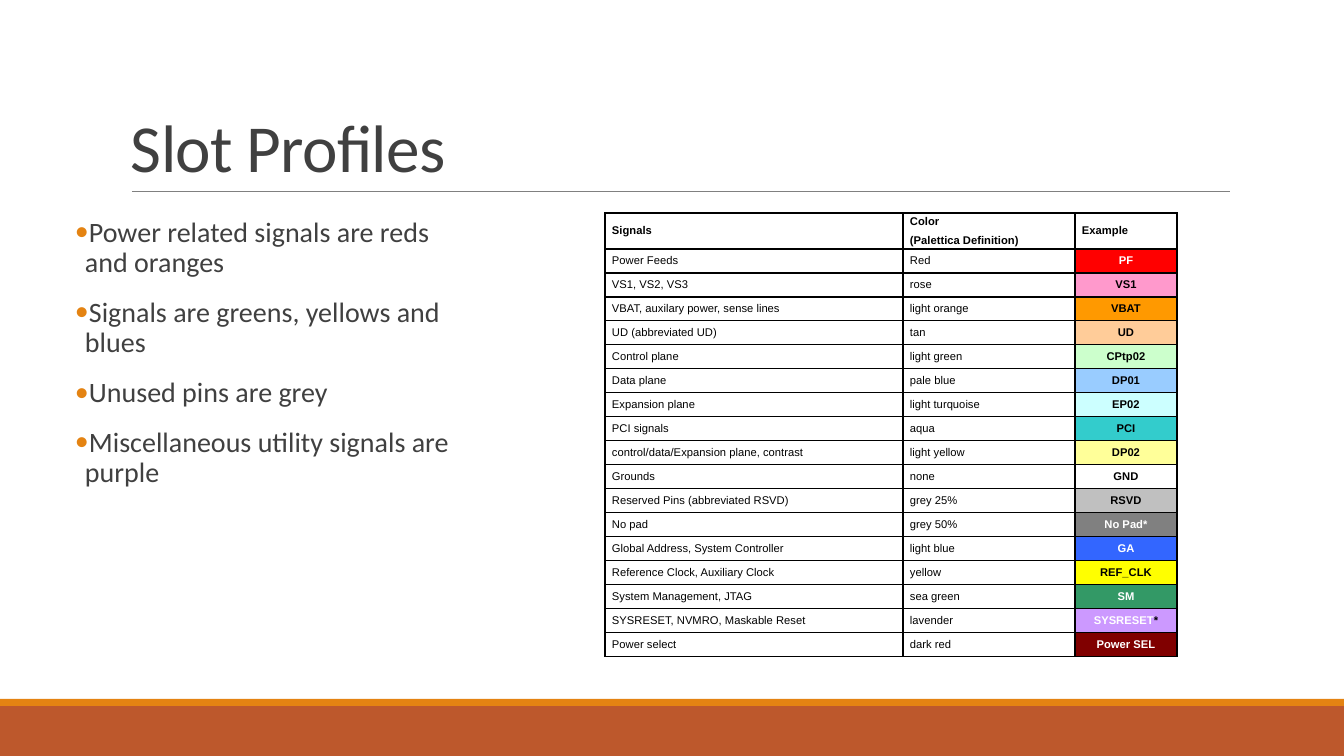
from dataclasses import dataclass
from typing import NamedTuple

from lxml import etree
from pptx import Presentation
from pptx.dml.color import RGBColor
from pptx.enum.shapes import MSO_CONNECTOR, MSO_SHAPE
from pptx.enum.text import MSO_ANCHOR, PP_ALIGN
from pptx.oxml.ns import qn
from pptx.util import Emu, Pt

STRAIGHT = MSO_CONNECTOR.STRAIGHT
RECTANGLE = MSO_SHAPE.RECTANGLE
BOTTOM, MIDDLE = MSO_ANCHOR.BOTTOM, MSO_ANCHOR.MIDDLE
CENTER, LEFT = PP_ALIGN.CENTER, PP_ALIGN.LEFT
EMU_PER_PX = 914400 / 100.8


@dataclass(frozen=True)
class Theme:
    """Colours, fonts and type sizes of the slide."""

    text: str = "404040"
    rule: str = "808080"
    accent: str = "E48312"
    footer: str = "BD582C"
    black: str = "000000"
    white: str = "FFFFFF"
    font: str = "Calibri"
    table_font: str = "Arial"
    title_size: int = 48
    body_size: int = 20
    table_size: int = 8
    inner_border: float = 1
    outer_border: float = 1.5


THEME = Theme()


class Signal(NamedTuple):
    """One row of the signal colour table."""

    name: str
    color: str
    example: str
    fill: str
    ink: str = THEME.black
    suffix: str = ""


class Box(NamedTuple):
    """A region in px."""

    left: int
    top: int
    width: int
    height: int


TITLE = "Slot Profiles"
BULLETS = [
    "Power related signals are reds and oranges",
    "Signals are greens, yellows and blues",
    "Unused pins are grey",
    "Miscellaneous utility signals are purple",
]
HEADINGS = ["Signals", "Color\n(Palettica Definition)", "Example"]
SIGNALS = [
    Signal("Power Feeds", "Red", "PF", "FF0000", THEME.white),
    Signal("VS1, VS2, VS3", "rose", "VS1", "FF99CC"),
    Signal("VBAT, auxilary power, sense lines", "light orange", "VBAT", "FF9900"),
    Signal("UD (abbreviated UD)", "tan", "UD", "FFCC99"),
    Signal("Control plane", "light green", "CPtp02", "CCFFCC"),
    Signal("Data plane", "pale blue", "DP01", "99CCFF"),
    Signal("Expansion plane", "light turquoise", "EP02", "CCFFFF"),
    Signal("PCI signals", "aqua", "PCI", "33CCCC"),
    Signal("control/data/Expansion plane, contrast", "light yellow", "DP02", "FFFF99"),
    Signal("Grounds", "none", "GND", "FFFFFF"),
    Signal("Reserved Pins (abbreviated RSVD)", "grey 25%", "RSVD", "C0C0C0"),
    Signal("No pad", "grey 50%", "No Pad*", "808080", THEME.white),
    Signal("Global Address, System Controller", "light blue", "GA", "3366FF", THEME.white),
    Signal("Reference Clock, Auxiliary Clock", "yellow", "REF_CLK", "FFFF00"),
    Signal("System Management, JTAG", "sea green", "SM", "339966", THEME.white),
    Signal("SYSRESET, NVMRO, Maskable Reset", "lavender", "SYSRESET", "CC99FF", THEME.white, "*"),
    Signal("Power select", "dark red", "Power SEL", "800000", THEME.white),
]
COLUMN_WIDTHS = [298, 172, 102]
HEADER_HEIGHT = 36


def px(length):
    """Turn px into EMU."""
    return Emu(round(length * EMU_PER_PX))


def place(box):
    """Turn a box in px into EMU lengths."""
    return [px(length) for length in box]


def style_run(run, size, color, font, bold=False):
    """Format one run."""
    run.font.size = Pt(size)
    run.font.name = font
    run.font.bold = bold
    run.font.color.rgb = RGBColor.from_string(color)


def add_band(slide, box, color):
    """Draw a plain filled band."""
    band = slide.shapes.add_shape(RECTANGLE, *place(box))
    band.shadow.inherit = False
    band.fill.solid()
    band.fill.fore_color.rgb = RGBColor.from_string(color)
    band.line.fill.background()


def add_footer(slide, box):
    """Draw the footer block with its accent strip on top."""
    strip = 7
    add_band(slide, box._replace(top=box.top + strip, height=box.height - strip), THEME.footer)
    add_band(slide, box._replace(height=strip), THEME.accent)


def add_title(slide, box):
    """Write the title and draw the rule below it."""
    bottom = box.top + box.height
    start, end = box.left + 11, box.left + box.width
    rule = slide.shapes.add_connector(STRAIGHT, px(start), px(bottom), px(end), px(bottom))
    rule.line.color.rgb = RGBColor.from_string(THEME.rule)
    rule.line.width = Pt(0.5)
    etree.SubElement(rule._element.spPr, qn("a:effectLst"))
    frame = slide.shapes.add_textbox(*place(box)).text_frame
    frame.word_wrap = True
    frame.vertical_anchor = BOTTOM
    frame.text = TITLE
    paragraph = frame.paragraphs[0]
    paragraph.line_spacing = 0.85
    run = paragraph.runs[0]
    style_run(run, THEME.title_size, THEME.text, THEME.font)
    run.font._element.set("spc", "-50")


def add_bullets(slide, box):
    """Write the bulleted list."""
    frame = slide.shapes.add_textbox(*place(box)).text_frame
    frame.word_wrap = True
    frame.margin_left = frame.margin_right = 0
    frame.text = "\n".join(BULLETS)
    for index, paragraph in enumerate(frame.paragraphs):
        properties = paragraph._p.get_or_add_pPr()
        properties.set("marL", str(px(10)))
        properties.set("indent", str(px(-10)))
        bullet_color = etree.SubElement(properties, qn("a:buClr"))
        etree.SubElement(bullet_color, qn("a:srgbClr"), val=THEME.accent)
        etree.SubElement(properties, qn("a:buFont"), typeface=THEME.font)
        etree.SubElement(properties, qn("a:buChar"), char="•")
        paragraph.line_spacing = 0.9
        paragraph.space_before = Pt(12 if index else 0)
        paragraph.space_after = Pt(2)
        style_run(paragraph.runs[0], THEME.body_size, THEME.text, THEME.font)


def set_borders(cell, outer_sides):
    """Draw the four cell borders, heavier on the outer sides."""
    properties = cell._tc.get_or_add_tcPr()
    for side in "LRTB":
        width = THEME.outer_border if side in outer_sides else THEME.inner_border
        line = etree.SubElement(properties, qn(f"a:ln{side}"), w=str(Pt(width)))
        fill = etree.SubElement(line, qn("a:solidFill"))
        etree.SubElement(fill, qn("a:srgbClr"), val=THEME.black)


def fill_cell(cell, text, color=THEME.black, fill=None, bold=False, align=LEFT):
    """Write and format one table cell."""
    cell.margin_left = cell.margin_right = px(7)
    cell.margin_top = cell.margin_bottom = 0
    cell.vertical_anchor = MIDDLE
    if fill:
        cell.fill.solid()
        cell.fill.fore_color.rgb = RGBColor.from_string(fill)
    else:
        cell.fill.background()
    cell.text_frame.text = text
    for index, paragraph in enumerate(cell.text_frame.paragraphs):
        paragraph.alignment = align
        paragraph.space_before = Pt(4 if index else 0)
        style_run(paragraph.runs[0], THEME.table_size, color, THEME.table_font, bold)


def add_signal_table(slide, box):
    """Build the table of signals, colours and examples."""
    row_count, column_count = len(SIGNALS) + 1, len(HEADINGS)
    table = slide.shapes.add_table(row_count, column_count, *place(box)).table
    table.first_row = table.horz_banding = False
    for column, width in zip(table.columns, COLUMN_WIDTHS):
        column.width = px(width)
    for index, row in enumerate(table.rows):
        row.height = px((box.height - HEADER_HEIGHT) / len(SIGNALS) if index else HEADER_HEIGHT)
        for position, cell in enumerate(row.cells):
            edges = {"T": index == 0, "B": index == row_count - 1,
                     "L": position == 0, "R": position == column_count - 1}
            set_borders(cell, [side for side, outer in edges.items() if outer])
    for position, heading in enumerate(HEADINGS):
        fill_cell(table.cell(0, position), heading, bold=True)
    for index, signal in enumerate(SIGNALS, 1):
        fill_cell(table.cell(index, 0), signal.name)
        fill_cell(table.cell(index, 1), signal.color)
        example = table.cell(index, 2)
        fill_cell(example, signal.example, signal.ink, signal.fill, True, CENTER)
        if signal.suffix:
            run = example.text_frame.paragraphs[0].add_run()
            run.text = signal.suffix
            style_run(run, THEME.table_size, THEME.black, THEME.table_font, True)


def main():
    """Build and save the presentation."""
    presentation = Presentation()
    presentation.slide_width, presentation.slide_height = px(1344), px(756)
    slide = presentation.slides.add_slide(presentation.slide_layouts[6])
    add_footer(slide, Box(0, 699, 1344, 57))
    add_title(slide, Box(121, 31, 1109, 160))
    add_bullets(slide, Box(75, 213, 394, 444))
    add_signal_table(slide, Box(605, 213, sum(COLUMN_WIDTHS), 444))
    presentation.save("out.pptx")


if __name__ == "__main__":
    main()
